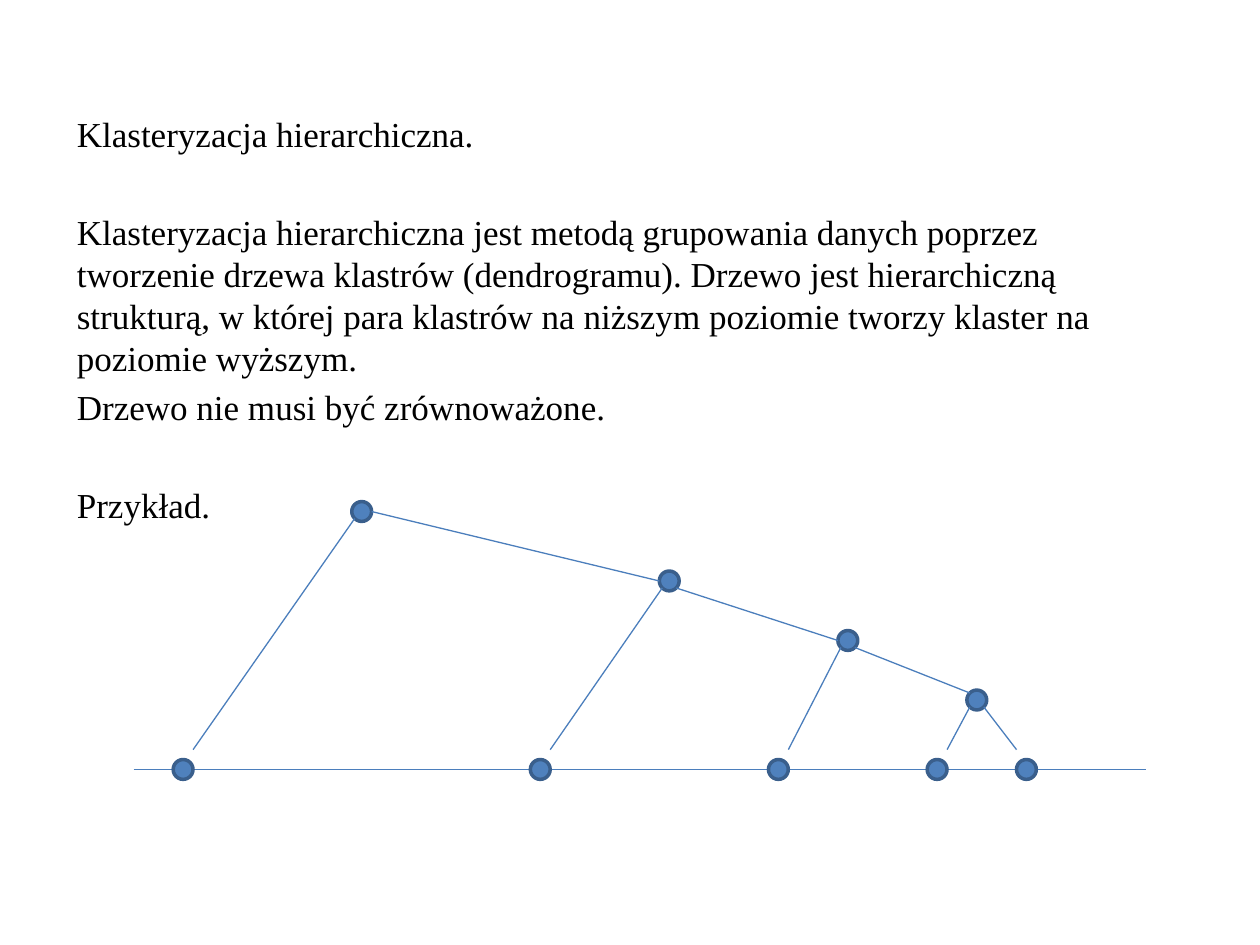
from math import sqrt

from lxml import etree
from pptx import Presentation
from pptx.dml.color import RGBColor
from pptx.enum.shapes import MSO_CONNECTOR, MSO_SHAPE
from pptx.oxml.ns import qn
from pptx.util import Cm, Inches, Pt

STRAIGHT = MSO_CONNECTOR.STRAIGHT
OVAL = MSO_SHAPE.OVAL

BLACK = RGBColor(0x00, 0x00, 0x00)
NODE_FILL = RGBColor(0x4F, 0x81, 0xBD)
NODE_LINE = RGBColor(0x3A, 0x5F, 0x8C)
EDGE_LINE = RGBColor(0x4B, 0x7E, 0xBC)

FONT = "Times New Roman"
FONT_SIZE = Pt(20)
CLOSE, APART = Pt(4), Pt(32)

PARAGRAPHS = [
    ("Klasteryzacja hierarchiczna.", CLOSE),
    ("Klasteryzacja hierarchiczna jest metodą grupowania danych poprzez "
     "tworzenie drzewa klastrów (dendrogramu). Drzewo jest hierarchiczną "
     "strukturą, w której para klastrów na niższym poziomie tworzy klaster "
     "na poziomie wyższym.", APART),
    ("Drzewo nie musi być zrównoważone.", CLOSE),
    ("Przykład.", APART),
]

# The dendrogram lies on a grid of square cells; a node has a radius of one cell.
CELL = Cm(0.2)
AXIS_COLUMNS, AXIS_ROW = 102, 26
LEAF_COLUMNS = [5, 41, 65, 81, 90]
MERGES = [(23, 0), (54, 7), (72, 13), (85, 19)]

DIAGONAL = 1 / sqrt(2)
LEFT, RIGHT = (-1, 0), (1, 0)
TOP_LEFT = (-DIAGONAL, -DIAGONAL)
BOTTOM_LEFT = (-DIAGONAL, DIAGONAL)
BOTTOM_RIGHT = (DIAGONAL, DIAGONAL)
ABOVE_LEFT, ABOVE_RIGHT = (-1, -2), (1, -2)
# Where each branch leaves a merge and where it reaches the next one.
BRANCH_ENDS = [(RIGHT, LEFT), (BOTTOM_RIGHT, LEFT), (BOTTOM_RIGHT, TOP_LEFT)]


def add_body(slide, left, top, width, height):
    body = slide.placeholders[1]
    body.left, body.top, body.width, body.height = left, top, width, height
    text_frame = body.text_frame
    text_frame.text = "\n".join(text for text, _ in PARAGRAPHS)
    for paragraph, (_, space) in zip(text_frame.paragraphs, PARAGRAPHS):
        paragraph.space_before = space
        properties = paragraph._p.get_or_add_pPr()
        properties.set("marL", "0")
        properties.set("indent", "0")
        etree.SubElement(properties, qn("a:buNone"))
        font = paragraph.runs[0].font
        font.name, font.size = FONT, FONT_SIZE
        font.color.rgb = BLACK


def add_dendrogram(slide, left, top):
    def shift(node, offset):
        return node[0] + offset[0], node[1] + offset[1]

    def place(point):
        return round(left + point[0] * CELL), round(top + point[1] * CELL)

    def add_edge(start, end):
        edge = slide.shapes.add_connector(STRAIGHT, *place(start), *place(end))
        edge.line.color.rgb = EDGE_LINE
        edge.line.width = Pt(0.75)
        etree.SubElement(edge._element.spPr, qn("a:effectLst"))

    def add_node(center):
        node = slide.shapes.add_shape(OVAL, *place(shift(center, (-1, -1))),
                                      2 * CELL, 2 * CELL)
        node.shadow.inherit = False
        node.fill.solid()
        node.fill.fore_color.rgb = NODE_FILL
        node.line.color.rgb = NODE_LINE
        node.line.width = Pt(2)

    leaves = [(column, AXIS_ROW) for column in LEAF_COLUMNS]
    add_edge((0, AXIS_ROW), (AXIS_COLUMNS, AXIS_ROW))
    for center in leaves + MERGES:
        add_node(center)
    for leaf, merge in zip(leaves, MERGES):
        add_edge(shift(leaf, ABOVE_RIGHT), shift(merge, BOTTOM_LEFT))
    add_edge(shift(leaves[-1], ABOVE_LEFT), shift(MERGES[-1], BOTTOM_RIGHT))
    for parent, child, (start, end) in zip(MERGES, MERGES[1:], BRANCH_ENDS):
        add_edge(shift(child, end), shift(parent, start))


def main():
    presentation = Presentation()
    presentation.slide_width, presentation.slide_height = Inches(10), Inches(7.5)
    slide = presentation.slides.add_slide(presentation.slide_layouts[1])
    title = slide.shapes.title._element
    title.getparent().remove(title)
    add_body(slide, Inches(0.51), Inches(0.84), Inches(9), Inches(5.67))
    add_dendrogram(slide, Inches(1.06), Inches(4.06))
    presentation.save("out.pptx")


if __name__ == "__main__":
    main()
